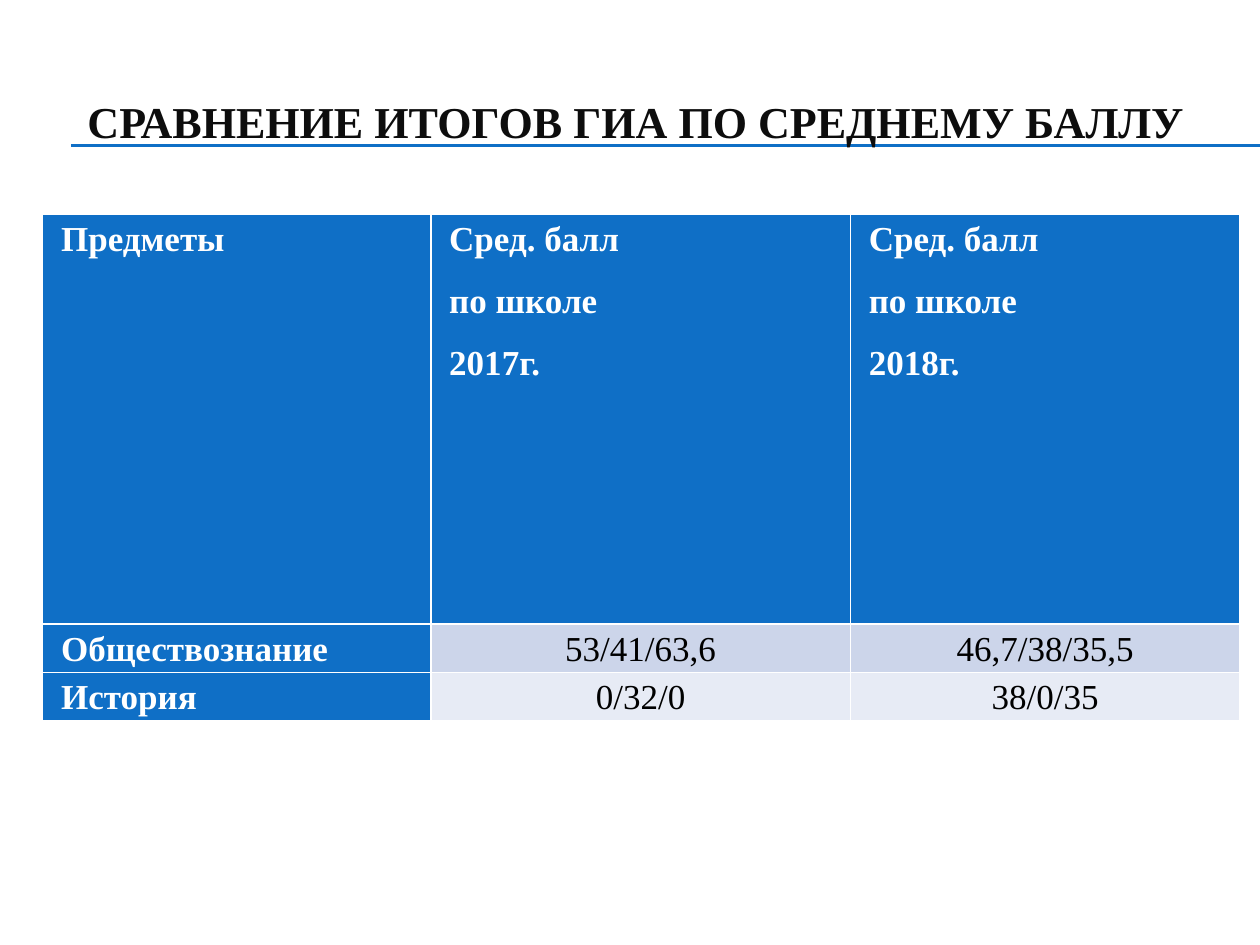
from lxml import etree
from pptx import Presentation
from pptx.dml.color import RGBColor
from pptx.enum import shapes, text
from pptx.util import Pt


def tint(part, code):
    part.solid()
    part.fore_color.rgb = RGBColor.from_string(code)


def write(frame, words, size=20, color="FFFFFF", bold=True,
          align=text.PP_ALIGN.JUSTIFY, lead=1.15, after=10):
    frame.word_wrap = True
    for i, line in enumerate(words.split("\n")):
        para = frame.add_paragraph() if i else frame.paragraphs[0]
        para.alignment = align
        para.line_spacing = lead
        para.space_after = Pt(after)
        run = para.add_run()
        run.text = line
        run.font.name = "Times New Roman"
        run.font.size = Pt(size)
        run.font.bold = bold
        tint(run.font.fill, color)


deck = Presentation()
deck.slide_width, deck.slide_height = Pt(720), Pt(540)
slide = deck.slides.add_slide(deck.slide_layouts[6])
blue = "0F6FC6"

for y in (82.8, 83.5):
    rule = slide.shapes.add_connector(
        shapes.MSO_CONNECTOR.STRAIGHT, Pt(40.5), Pt(y), Pt(720), Pt(y))
    rule.line.width = Pt(0.75)
    tint(rule.line.fill, blue)
    props = rule.element.spPr
    etree.SubElement(props, props.tag.replace("}spPr", "}effectLst").replace(
        "presentationml", "drawingml").replace("2006/main", "2006/main"))

title = slide.shapes.add_textbox(Pt(24), Pt(36), Pt(684), Pt(66)).text_frame
title.vertical_anchor = text.MSO_ANCHOR.MIDDLE
title.margin_left, title.margin_right = Pt(26), 0
write(title, "СРАВНЕНИЕ ИТОГОВ ГИА ПО СРЕДНЕМУ БАЛЛУ", size=25.2,
      color="0D0D0D", align=text.PP_ALIGN.LEFT, lead=1.0, after=0)

rows = [
    ["Предметы", "Сред. балл\nпо школе\n2017г.", "Сред. балл\nпо школе\n2018г."],
    ["Обществознание", "53/41/63,6", "46,7/38/35,5"],
    ["История", "0/32/0", "38/0/35"],
]
bands = [blue, "CCD5EA", "E7EBF5"]
grid = slide.shapes.add_table(3, 3, Pt(24.4), Pt(122.6), Pt(684), Pt(272)).table
grid.first_col = True
for col, wide in zip(grid.columns, (221.8, 239.8, 222.5)):
    col.width = Pt(wide)
for row, high in zip(grid.rows, (234, 18.7, 18.7)):
    row.height = Pt(high)

for r, row in enumerate(rows):
    for c, words in enumerate(row):
        cell = grid.cell(r, c)
        cell.margin_left = cell.margin_right = Pt(10.5)
        cell.margin_top = cell.margin_bottom = 0
        if r and c:
            tint(cell.fill, bands[r])
            write(cell.text_frame, words, color="000000", bold=False,
                  align=text.PP_ALIGN.CENTER)
        else:
            tint(cell.fill, blue)
            write(cell.text_frame, words)

deck.save("out.pptx")
